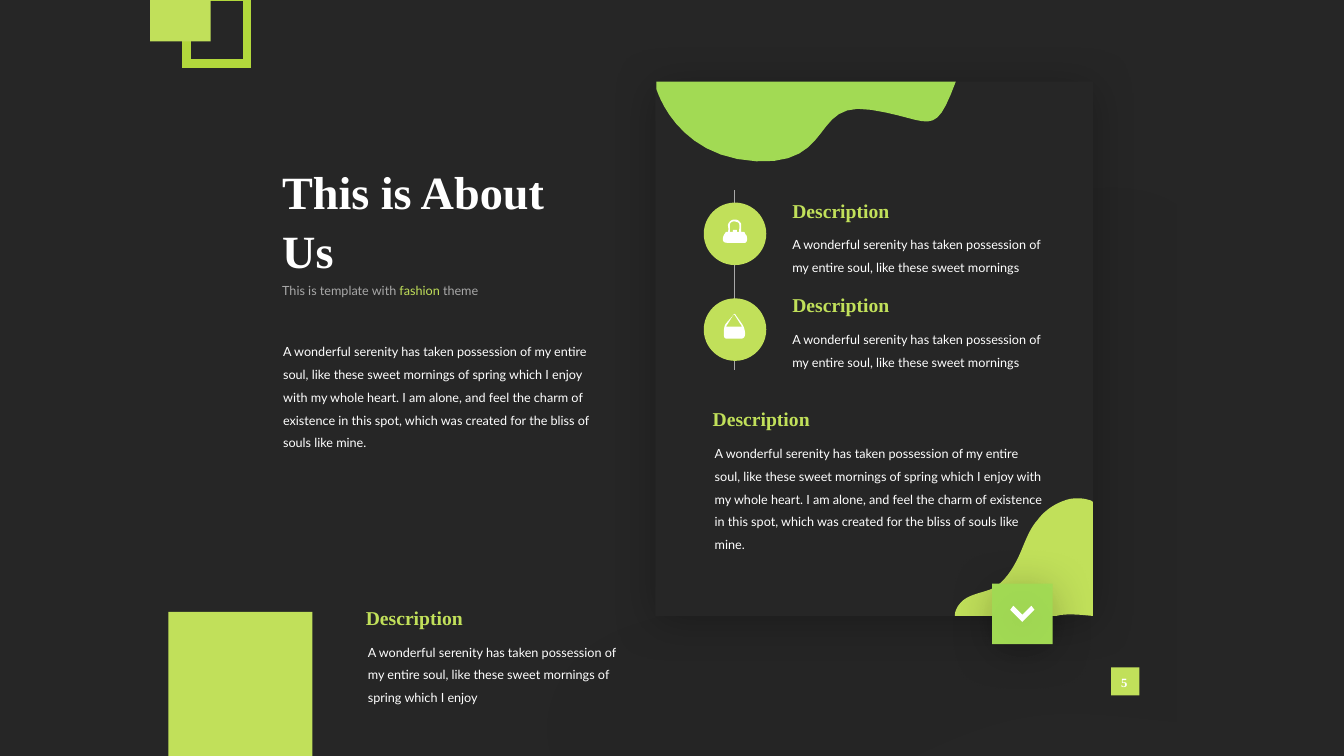
from dataclasses import dataclass

from lxml import etree
from pptx import Presentation
from pptx.dml.color import RGBColor as RGB
from pptx.enum.shapes import MSO_CONNECTOR as CONN, MSO_SHAPE as SHAPE
from pptx.enum.text import MSO_ANCHOR as ANCHOR, PP_ALIGN as ALIGN
from pptx.oxml.ns import qn
from pptx.util import Inches, Pt


@dataclass(frozen=True)
class Theme:
    dark: str = "262626"
    shade: str = "131313"
    lime: str = "C1E05A"
    leaf: str = "A2DA54"
    frame: str = "B2D83C"
    grey: str = "A8A8A8"
    white: str = "FFFFFF"
    black: str = "000000"
    serif: str = "Times New Roman"
    sans: str = "Lato"
    title: int = 33
    heading: int = 14
    body: int = 9


T = Theme()

SHORT = "A wonderful serenity has taken possession of my entire soul, like these sweet mornings"
MEDIUM = SHORT + " of spring which I enjoy"
LONG = MEDIUM + (" with my whole heart. I am alone, and feel the charm of existence in this spot,"
                 " which was created for the bliss of souls like mine.")

# An outline is a list of contours. Each starts at a point; then a pair is
# a straight step and a group of six is a Bézier step, all in inches.
BACK_BLOB = [[
    (11.46, 1.93), (11.19, 1.84, 10.9, 1.85, 10.62, 1.91), (10.05, 2.04, 9.52, 2.37, 9.15, 2.82),
    (8.76, 3.31, 8.56, 3.93, 8.3, 4.5), (8.05, 5.08, 7.69, 5.66, 7.12, 5.93),
    (6.71, 6.12, 6.23, 6.14, 5.87, 6.4), (5.61, 6.59, 5.44, 6.89, 5.43, 7.2),
    (5.42, 7.52, 5.58, 7.84, 5.85, 8), (6.03, 8.11, 6.23, 8.15, 6.43, 8.17),
    (6.94, 8.22, 7.45, 8.17, 7.93, 8.01), (8.72, 7.75, 9.43, 7.21, 10.26, 7.1),
    (10.72, 7.04, 11.2, 7.12, 11.67, 7.16), (11.67, 2.03), (11.6, 1.99, 11.53, 1.95, 11.46, 1.93)]]
CORNER_BLOB = [[
    (10.53, 6.1), (10.63, 6.09, 10.73, 6.1, 10.83, 6.11), (10.84, 6.11), (10.84, 4.98),
    (10.83, 4.97, 10.81, 4.96, 10.8, 4.96), (10.74, 4.94, 10.67, 4.94, 10.61, 4.95),
    (10.49, 4.98, 10.37, 5.05, 10.29, 5.16), (10.2, 5.26, 10.16, 5.4, 10.1, 5.53),
    (10.04, 5.65, 9.96, 5.78, 9.84, 5.84), (9.75, 5.88, 9.64, 5.89, 9.56, 5.95),
    (9.51, 5.99, 9.47, 6.05, 9.47, 6.11), (10.47, 6.11), (10.49, 6.11, 10.51, 6.1, 10.53, 6.1)]]
TOP_WAVE = [[
    (6.51, 0.88), (6.51, 0.88, 6.7, 1.56, 7.5, 1.6), (8.29, 1.64, 8.04, 0.99, 8.64, 1.09),
    (9.24, 1.18, 9.26, 1.4, 9.48, 0.81), (6.51, 0.81)]]
HANDBAG = [
    [(7.39, 2.41), (7.41, 2.4, 7.41, 2.38, 7.41, 2.37), (7.41, 2.34, 7.4, 2.33, 7.39, 2.32),
     (7.39, 2.31, 7.38, 2.3, 7.38, 2.3), (7.35, 2.3), (7.35, 2.27, 7.35, 2.24, 7.35, 2.22),
     (7.34, 2.2, 7.32, 2.18, 7.3, 2.18), (7.26, 2.17, 7.23, 2.2, 7.22, 2.23),
     (7.22, 2.25, 7.23, 2.27, 7.22, 2.3), (7.2, 2.3), (7.19, 2.32, 7.17, 2.34, 7.17, 2.37),
     (7.17, 2.38, 7.17, 2.39, 7.18, 2.4), (7.19, 2.41, 7.22, 2.41, 7.24, 2.41), (7.34, 2.41)],
    [(7.33, 2.3), (7.31, 2.3), (7.31, 2.28), (7.27, 2.28), (7.27, 2.3), (7.24, 2.3),
     (7.24, 2.27, 7.24, 2.25, 7.24, 2.23), (7.24, 2.21, 7.26, 2.19, 7.3, 2.2),
     (7.31, 2.2, 7.33, 2.21, 7.33, 2.22), (7.34, 2.24, 7.33, 2.27, 7.33, 2.3)]]
SHOULDER_BAG = [
    [(7.35, 3.36), (7.21, 3.36), (7.18, 3.36, 7.18, 3.34, 7.18, 3.31),
     (7.18, 3.27, 7.18, 3.24, 7.2, 3.21), (7.27, 3.13), (7.28, 3.11, 7.29, 3.11, 7.3, 3.13),
     (7.35, 3.2), (7.38, 3.24, 7.39, 3.28, 7.39, 3.31), (7.39, 3.34, 7.38, 3.36, 7.35, 3.36)],
    [(7.2, 3.24), (7.36, 3.24), (7.34, 3.21), (7.29, 3.13), (7.28, 3.12), (7.27, 3.13), (7.22, 3.21)]]
CHEVRON = [[(10.02, 6.05), (10.14, 6.17), (10.26, 6.05), (10.23, 6.01), (10.14, 6.1), (10.05, 6.01)]]


def flatten(contour, steps=12):
    """Turn a contour into points in EMU, sampling its Bézier steps."""
    points = [contour[0]]
    for step in contour[1:]:
        if len(step) == 2:
            points.append(step)
            continue
        ctrl = [points[-1], step[:2], step[2:4], step[4:]]
        for i in range(1, steps + 1):
            t = i / steps
            weights = ((1 - t) ** 3, 3 * t * (1 - t) ** 2, 3 * t * t * (1 - t), t ** 3)
            points.append(tuple(sum(w * c[axis] for w, c in zip(weights, ctrl)) for axis in (0, 1)))
    return [(Inches(x), Inches(y)) for x, y in points]


class Painter:
    def __init__(self, slide, theme):
        self.slide, self.theme = slide, theme
        self.shapes = slide.shapes

    def background(self, color):
        fill = self.slide.background.fill
        fill.solid()
        fill.fore_color.rgb = RGB.from_string(color)

    def paint(self, sp, color, alpha=None, shadow=False):
        sp.shadow.inherit = False
        sp.line.fill.background()
        sp.fill.solid()
        sp.fill.fore_color.rgb = RGB.from_string(color)
        sp_pr = sp.element.spPr
        if alpha:
            clr = sp_pr.find(".//" + qn("a:srgbClr"))
            etree.SubElement(clr, qn("a:alpha"), val=str(alpha * 1000))
        if shadow:
            outer = etree.SubElement(sp_pr.find(qn("a:effectLst")), qn("a:outerShdw"),
                                     blurRad=str(Pt(31)), dist=str(Pt(4)), dir="5400000",
                                     algn="t", rotWithShape="0")
            clr = etree.SubElement(outer, qn("a:srgbClr"), val=self.theme.black)
            etree.SubElement(clr, qn("a:alpha"), val="25000")
        return sp

    def shape(self, x, y, w, h, color, kind=SHAPE.RECTANGLE, shadow=False):
        sp = self.shapes.add_shape(kind, Inches(x), Inches(y), Inches(w), Inches(h))
        return self.paint(sp, color, shadow=shadow)

    def frame(self, x, y, w, h, color, width):
        sp = self.shape(x, y, w, h, color)
        sp.fill.background()
        sp.line.color.rgb = RGB.from_string(color)
        sp.line.width = Pt(width)
        etree.SubElement(sp.element.spPr.find(qn("a:ln")), qn("a:miter"), lim="800000")

    def outline(self, contours, color, alpha=None, shadow=False):
        first, *rest = [flatten(c) for c in contours]
        builder = self.shapes.build_freeform(*first[0])
        builder.add_line_segments(first[1:], close=True)
        for points in rest:
            builder.move_to(*points[0])
            builder.add_line_segments(points[1:], close=True)
        self.paint(builder.convert_to_shape(), color, alpha, shadow)

    def line(self, x1, y1, x2, y2, color, width):
        cxn = self.shapes.add_connector(CONN.STRAIGHT, Inches(x1), Inches(y1), Inches(x2), Inches(y2))
        cxn.line.color.rgb = RGB.from_string(color)
        cxn.line.width = Pt(width)
        etree.SubElement(cxn.element.spPr, qn("a:effectLst"))

    def text(self, x, y, w, h, runs, size, font, bold=False, spacing=None,
             anchor=ANCHOR.TOP, align=ALIGN.LEFT):
        """Add a one-paragraph text box; runs are (text, colour) pairs."""
        tf = self.shapes.add_textbox(Inches(x), Inches(y), Inches(w), Inches(h)).text_frame
        tf.word_wrap, tf.vertical_anchor = True, anchor
        p = tf.paragraphs[0]
        p.alignment, p.line_spacing = align, spacing
        p.font.size, p.font.name, p.font.bold = Pt(size), font, bold
        for content, color in runs:
            r = p.add_run()
            r.text = content
            r.font.color.rgb = RGB.from_string(color)

    def body(self, x, y, w, h, content):
        t = self.theme
        self.text(x, y, w, h, [(content, t.white)], t.body, t.sans, spacing=1.5)

    def description(self, x, y, w, h, content, indent=0.0):
        """Add a heading with body text below it, shifted right by indent."""
        t = self.theme
        self.body(x + indent, y + 0.31, w, h, content)
        self.text(x, y, 1.45, 0.34, [("Description", t.lime)], t.heading, t.serif, bold=True)


def main():
    prs = Presentation()
    prs.slide_width, prs.slide_height = Inches(13.33), Inches(7.5)
    s = Painter(prs.slides.add_slide(prs.slide_layouts[6]), T)

    s.background(T.dark)
    s.shape(1.67, 6.07, 1.43, 1.43, T.lime)
    s.outline(BACK_BLOB, T.shade, alpha=5)

    s.text(2.7, 1.31, 3.22, 1.73, [("This is About Us", T.white)], T.title, T.serif,
           bold=True, spacing=1.05, anchor=ANCHOR.MIDDLE)
    s.text(2.7, 2.72, 2.75, 0.32,
           [("This is template with ", T.grey), ("fashion ", T.lime), ("theme", T.grey)],
           T.body, T.sans, anchor=ANCHOR.MIDDLE)
    s.body(2.71, 3.29, 3.27, 1.21, LONG)

    s.shape(6.5, 0.81, 4.34, 5.3, T.dark, shadow=True)
    s.line(7.28, 1.89, 7.28, 3.67, T.grey, 0.5)
    for i, icon in enumerate((HANDBAG, SHOULDER_BAG)):
        s.description(7.76, 1.92 + 0.94 * i, 2.84, 0.53, SHORT)
        s.shape(6.98, 2.01 + 0.95 * i, 0.62, 0.62, T.lime, SHAPE.OVAL)
        s.outline(icon, T.white)

    s.description(3.53, 5.96, 2.73, 0.75, MEDIUM, indent=0.02)
    s.outline(CORNER_BLOB, T.lime)
    s.shape(9.84, 5.79, 0.6, 0.6, T.leaf, shadow=True)
    s.outline(CHEVRON, T.white, shadow=True)
    s.description(6.97, 3.99, 3.45, 1.21, LONG, indent=0.02)
    s.outline(TOP_WAVE, T.leaf)

    s.shape(11.02, 6.62, 0.28, 0.28, T.lime)
    s.text(10.95, 6.65, 0.4, 0.25, [("5", T.white)], T.body, T.serif, bold=True, align=ALIGN.CENTER)
    s.frame(1.85, -0.03, 0.6, 0.66, T.frame, 6)
    s.shape(1.49, -0.21, 0.6, 0.62, T.lime)

    prs.save("out.pptx")


if __name__ == "__main__":
    main()
